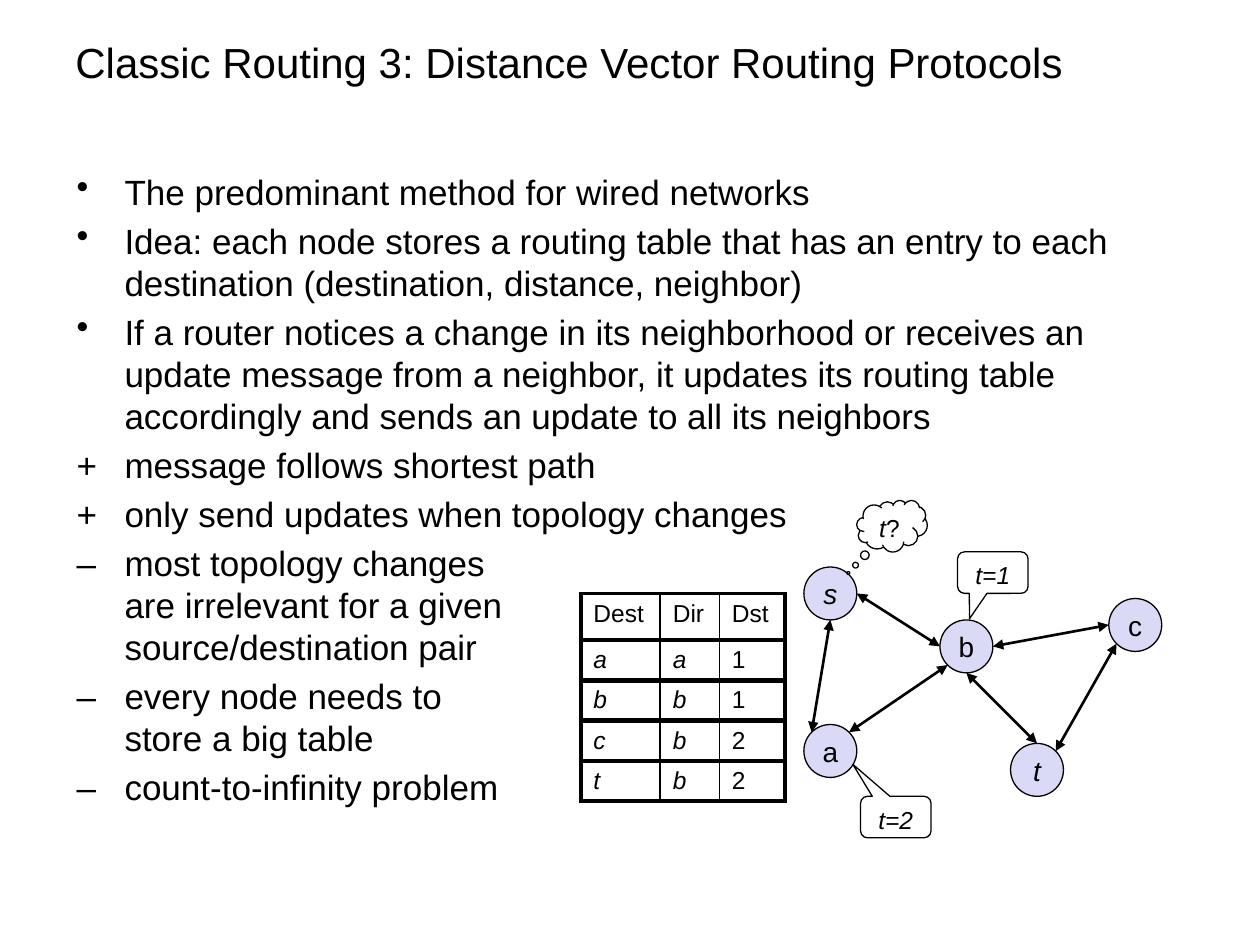
"""Build the slide on distance vector routing protocols."""
from dataclasses import dataclass
from math import cos, radians, sin

from lxml import etree
from pptx import Presentation
from pptx.dml.color import RGBColor
from pptx.enum.shapes import MSO_CONNECTOR, MSO_SHAPE
from pptx.enum.text import MSO_ANCHOR, PP_ALIGN
from pptx.oxml.ns import qn
from pptx.util import Inches, Pt

TOP, MIDDLE = MSO_ANCHOR.TOP, MSO_ANCHOR.MIDDLE
CENTER = PP_ALIGN.CENTER
OVAL = MSO_SHAPE.OVAL
SPEECH = MSO_SHAPE.ROUNDED_RECTANGULAR_CALLOUT
THOUGHT = MSO_SHAPE.CLOUD_CALLOUT
STRAIGHT = MSO_CONNECTOR.STRAIGHT


@dataclass(frozen=True)
class Theme:
    """Colours, font and type sizes of the slide."""
    font: str = "Arial"
    ink: str = "000000"
    node: str = "DADAF6"
    title: int = 24
    body: int = 20
    label: int = 16
    small: int = 14


THEME = Theme()
NODE_SIZE = 0.42
NODES = {"s": (6.38, 4.5), "a": (6.38, 5.75), "b": (7.46, 4.92),
         "t": (8.02, 5.9), "c": (8.8, 4.75)}
ITALIC_NODES = "st"
EDGES = [("s", 0, "b", 180), ("a", 45, "b", 225), ("s", 270, "a", 135),
         ("c", 225, "t", 45), ("b", 270, "t", 90), ("c", 180, "b", 0)]
CALLOUTS = [
    (SPEECH, (7.6, 4.38, 0.56, 0.33), (-0.33, 1.11, 0.17), [("t=1", True)]),
    (THOUGHT, (6.8, 3.97, 0.56, 0.41), (-0.62, 0.91), [("t", True), ("?", False)]),
    (SPEECH, (6.83, 6.32, 0.56, 0.33), (-0.61, -1.27, 0.17), [("t=2", True)]),
]
ROUTES = [("Dest", "Dir", "Dst"), ("a", "a", "1"), ("b", "b", "1"),
          ("c", "b", "2"), ("t", "b", "2")]
COLUMNS = (0.63, 0.47, 0.52)
ROWS = (0.37, 0.32, 0.32, 0.32, 0.32)
BULLETS = [
    "The predominant method for wired networks",
    "Idea: each node stores a routing table that has an entry to each "
    "destination (destination, distance, neighbor)",
    "If a router notices a change in its neighborhood or receives an update "
    "message from a neighbor, it updates its routing table accordingly and "
    "sends an update to all its neighbors",
]
PROS_CONS = [
    "+\tmessage follows shortest path",
    "+\tonly send updates when topology changes",
    "–\tmost topology changes\nare irrelevant for a given\nsource/destination pair",
    "–\tevery node needs to\nstore a big table",
    "–\tcount-to-infinity problem",
]


def rgb(color):
    """Return a colour object for a hex string."""
    return RGBColor.from_string(color)


def add_run(p, text, size, italic=False):
    """Add one styled run to a paragraph."""
    r = p.add_run()
    r.text = text
    r.font.name = THEME.font
    r.font.size = Pt(size)
    r.font.italic = italic
    r.font.color.rgb = rgb(THEME.ink)


def add_text_box(slide, box, anchor):
    """Add a wrapping text box and return its text frame."""
    tf = slide.shapes.add_textbox(*map(Inches, box)).text_frame
    tf.word_wrap = True
    tf.vertical_anchor = anchor
    return tf


def set_hanging(p, bullet):
    """Give a paragraph a hanging indent, with or without a bullet."""
    pPr = p._p.get_or_add_pPr()
    pPr.set("marL", str(Inches(0.38)))
    pPr.set("indent", str(-Inches(0.38)))
    if bullet:
        etree.SubElement(pPr, qn("a:buChar")).set("char", "•")
    else:
        etree.SubElement(pPr, qn("a:buNone"))


def add_body(slide):
    """Add the bullets followed by the pros and cons."""
    tf = add_text_box(slide, (0.51, 1.3, 8.98, 5.45), TOP)
    for i, text in enumerate(BULLETS + PROS_CONS):
        p = tf.add_paragraph() if i else tf.paragraphs[0]
        set_hanging(p, i < len(BULLETS))
        if i:
            p.space_before = Pt(4)
        for j, line in enumerate(text.split("\n")):
            if j:
                p.add_line_break()
            add_run(p, line, THEME.body)


def add_labelled_shape(slide, kind, box, runs, size, fill=None):
    """Add an outlined shape with a centred label."""
    sp = slide.shapes.add_shape(kind, *map(Inches, box))
    sp.shadow.inherit = False
    if fill:
        sp.fill.solid()
        sp.fill.fore_color.rgb = rgb(fill)
    else:
        sp.fill.background()
    sp.line.color.rgb = rgb(THEME.ink)
    sp.line.width = Pt(0.75)
    tf = sp.text_frame
    tf.word_wrap = False
    tf.vertical_anchor = MIDDLE
    p = tf.paragraphs[0]
    p.alignment = CENTER
    for text, italic in runs:
        add_run(p, text, size, italic)
    return sp


def add_callout(slide, kind, box, adjustments, runs):
    """Add a callout whose tail is placed by its adjustments."""
    sp = add_labelled_shape(slide, kind, box, runs, THEME.small)
    sp.text_frame.margin_top = Inches(0.07)
    sp.text_frame.margin_bottom = Inches(0.03)
    for i, value in enumerate(adjustments):
        sp.adjustments[i] = value


def rim_point(name, angle):
    """Return the point on a node's rim at an angle in degrees."""
    x, y = NODES[name]
    r = NODE_SIZE / 2
    return (Inches(x + r + r * cos(radians(angle))),
            Inches(y + r - r * sin(radians(angle))))


def add_edge(slide, start, start_angle, end, end_angle):
    """Join two nodes with a double-headed arrow."""
    cxn = slide.shapes.add_connector(
        STRAIGHT, *rim_point(start, start_angle), *rim_point(end, end_angle))
    cxn.line.color.rgb = rgb(THEME.ink)
    cxn.line.width = Pt(1.5)
    ln = cxn.line._get_or_add_ln()
    for tag in ("a:headEnd", "a:tailEnd"):
        etree.SubElement(ln, qn(tag)).set("type", "triangle")
    etree.SubElement(cxn._element.spPr, qn("a:effectLst"))


def set_borders(cell, widths):
    """Draw the left, right, top and bottom borders of a cell."""
    tcPr = cell._tc.get_or_add_tcPr()
    for side, width in zip("LRTB", widths):
        ln = etree.SubElement(tcPr, qn(f"a:ln{side}"), w=str(Pt(width)))
        fill = etree.SubElement(ln, qn("a:solidFill"))
        etree.SubElement(fill, qn("a:srgbClr")).set("val", THEME.ink)


def add_routing_table(slide):
    """Add the routing table of node s."""
    box = (4.61, 4.71, sum(COLUMNS), sum(ROWS))
    table = slide.shapes.add_table(
        len(ROWS), len(COLUMNS), *map(Inches, box)).table
    table.first_row = table.horz_banding = False
    for column, width in zip(table.columns, COLUMNS):
        column.width = Inches(width)
    last_row, last_col = len(ROWS) - 1, len(COLUMNS) - 1
    for i, values in enumerate(ROUTES):
        table.rows[i].height = Inches(ROWS[i])
        for j, value in enumerate(values):
            cell = table.cell(i, j)
            set_borders(cell, (2.25 if j == 0 else 1,
                               2.25 if j == last_col else 1,
                               2.25 if i == 0 else 3,
                               2.25 if i == last_row else 3))
            cell.fill.background()
            cell.margin_bottom = Inches(0.03)
            add_run(cell.text_frame.paragraphs[0], value, THEME.small,
                    i > 0 and j < last_col)


def main():
    """Build and save the slide."""
    prs = Presentation()
    prs.slide_width, prs.slide_height = Inches(10), Inches(7.5)
    slide = prs.slides.add_slide(prs.slide_layouts[6])
    tf = add_text_box(slide, (0.5, 0.22, 9, 0.54), MIDDLE)
    add_run(tf.paragraphs[0],
            "Classic Routing 3: Distance Vector Routing Protocols", THEME.title)
    add_body(slide)
    for name, (x, y) in NODES.items():
        add_labelled_shape(slide, OVAL, (x, y, NODE_SIZE, NODE_SIZE),
                           [(name, name in ITALIC_NODES)], THEME.label, THEME.node)
    for edge in EDGES:
        add_edge(slide, *edge)
    add_routing_table(slide)
    for callout in CALLOUTS:
        add_callout(slide, *callout)
    prs.save("out.pptx")


if __name__ == "__main__":
    main()
